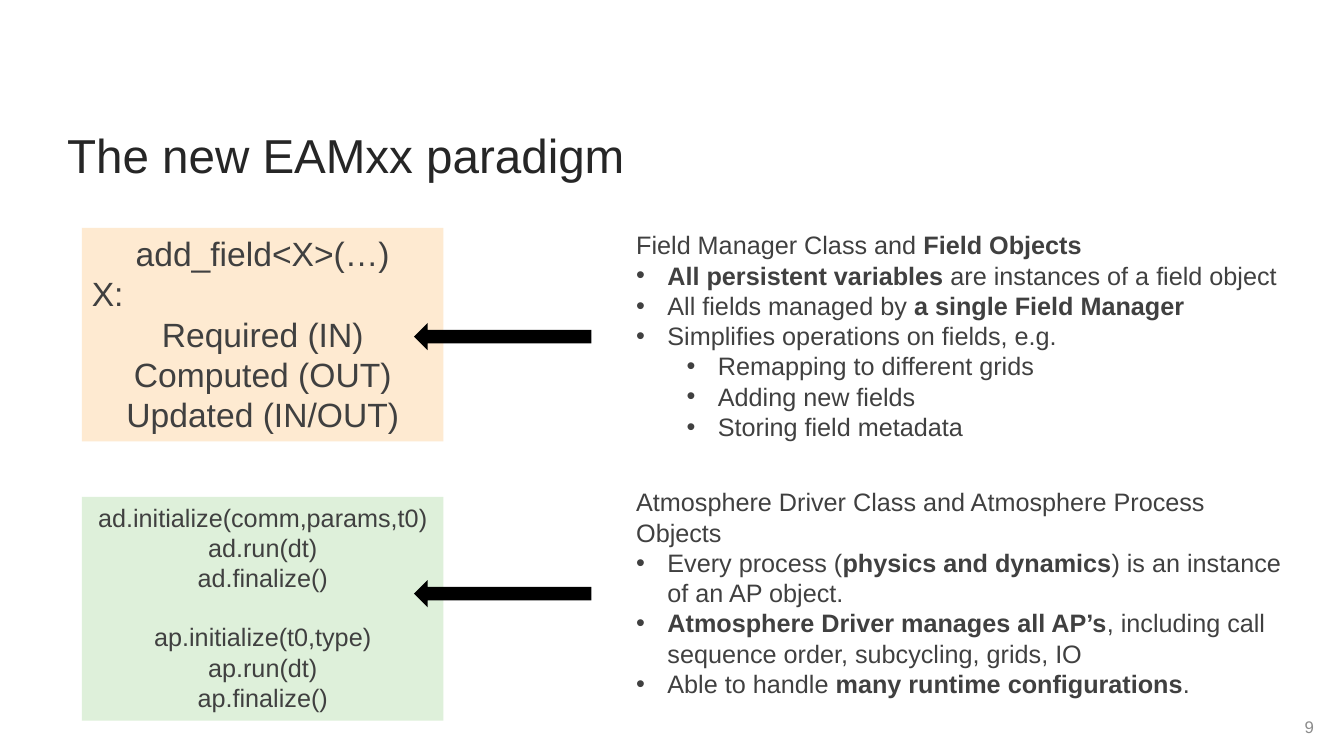
from pptx import Presentation
from pptx.dml.color import RGBColor
from pptx.enum.shapes import MSO_SHAPE as SHAPE
from pptx.enum.text import MSO_ANCHOR as ANCHOR, PP_ALIGN as ALIGN
from pptx.oxml.ns import qn
from pptx.util import Inches, Pt
from lxml.etree import SubElement

FONT = "Arial"
BLACK = RGBColor(0x00, 0x00, 0x00)
TITLE_INK = RGBColor(0x26, 0x26, 0x26)
INK = RGBColor(0x40, 0x40, 0x40)
GREY = RGBColor(0x8C, 0x8C, 0x8C)
ORANGE = RGBColor(0xFE, 0xEA, 0xD1)
GREEN = RGBColor(0xDE, 0xF0, 0xDA)

WIDTH, HEIGHT = Inches(13.33), Inches(7.5)

# Columns as (left, width) and rows as (top, height), in percent of the slide
CODE_COL, ARROW_COL, NOTES_COL = (6.1, 26.9), (30.8, 13.2), (46.6, 49.5)
NOTES_HEIGHT, ARROW_HEIGHT = 29.6, 3.6
BULLET_INDENT, LEVEL_STEP = Inches(0.31), Inches(0.5)
BLANK_LINE = Pt(20.7)

FIELD_CODE = [
    ("add_field<X>(…)", {"alignment": ALIGN.CENTER}),
    ("X:", {"alignment": ALIGN.LEFT}),
    ("Required (IN)", {"alignment": ALIGN.CENTER}),
    ("Computed (OUT)", {"alignment": ALIGN.CENTER}),
    ("Updated (IN/OUT)", {"alignment": ALIGN.CENTER}),
]
DRIVER_CODE = [
    ("ad.initialize(comm,params,t0)", {"alignment": ALIGN.CENTER}),
    ("ad.run(dt)", {"alignment": ALIGN.CENTER}),
    ("ad.finalize()", {"alignment": ALIGN.CENTER}),
    ("ap.initialize(t0,type)", {"alignment": ALIGN.CENTER, "space_before": BLANK_LINE}),
    ("ap.run(dt)", {"alignment": ALIGN.CENTER}),
    ("ap.finalize()", {"alignment": ALIGN.CENTER}),
]

# Notes as (bullet level or None, text); ** switches bold on and off
FIELD_NOTES = [
    (None, "Field Manager Class and **Field Objects**"),
    (0, "**All persistent variables** are instances of a field object"),
    (0, "All fields managed by **a single Field Manager**"),
    (0, "Simplifies operations on fields, e.g."),
    (1, "Remapping to different grids"),
    (1, "Adding new fields"),
    (1, "Storing field metadata"),
]
DRIVER_NOTES = [
    (None, "Atmosphere Driver Class and Atmosphere Process Objects"),
    (0, "Every process (**physics and dynamics**) is an instance of an AP object."),
    (0, "**Atmosphere Driver manages all AP’s**, including call sequence order, "
        "subcycling, grids, IO"),
    (0, "Able to handle **many runtime configurations**."),
]


def place(col, row):
    """Turn a percent column and row into left, top, width, height."""
    (left, width), (top, height) = col, row
    return [int(size * share / 100) for size, share in
            ((WIDTH, left), (HEIGHT, top), (WIDTH, width), (HEIGHT, height))]


def set_format(target, values):
    for name, value in values.items():
        setattr(target, name, value)


def style_font(font, size, color):
    set_format(font, {"name": FONT, "size": Pt(size)})
    font.color.rgb = color


def add_paragraph(tf, index):
    return tf.add_paragraph() if index else tf.paragraphs[0]


def add_text_box(slide, col, row, **frame):
    tf = slide.shapes.add_textbox(*place(col, row)).text_frame
    set_format(tf, {"word_wrap": True, **frame})
    return tf


def add_label(slide, col, row, text, size, color, frame, paragraph):
    p = add_text_box(slide, col, row, **frame).paragraphs[0]
    set_format(p, paragraph)
    r = p.add_run()
    r.text = text
    style_font(r.font, size, color)


def add_filled_shape(slide, kind, col, row, color):
    sp = slide.shapes.add_shape(kind, *place(col, row))
    sp.shadow.inherit = False
    sp.fill.solid()
    sp.fill.fore_color.rgb = color
    sp.line.fill.background()
    return sp


def add_code_box(slide, row, color, size, lines):
    sp = add_filled_shape(slide, SHAPE.RECTANGLE, CODE_COL, row, color)
    tf = sp.text_frame
    set_format(tf, {"word_wrap": True, "vertical_anchor": ANCHOR.TOP})
    for i, (text, values) in enumerate(lines):
        p = add_paragraph(tf, i)
        set_format(p, values)
        r = p.add_run()
        r.text = text
        style_font(r.font, size, INK)


def add_bullet(p, level):
    p.level = level
    pPr = p._p.get_or_add_pPr()
    pPr.set("marL", str(BULLET_INDENT + level * LEVEL_STEP))
    pPr.set("indent", str(-BULLET_INDENT))
    SubElement(pPr, qn("a:buFont"), typeface=FONT)
    SubElement(pPr, qn("a:buChar"), char="•")


def add_notes(slide, top, notes):
    """Add a bulleted explanation and the arrow from its middle to the code."""
    tf = add_text_box(slide, NOTES_COL, (top, NOTES_HEIGHT))
    for i, (level, text) in enumerate(notes):
        p = add_paragraph(tf, i)
        if level is not None:
            add_bullet(p, level)
        for j, part in enumerate(text.split("**")):
            if part:
                r = p.add_run()
                r.text = part
                style_font(r.font, 18, INK)
                r.font.bold = j % 2 == 1
    arrow_top = top + (NOTES_HEIGHT - ARROW_HEIGHT) / 2
    add_filled_shape(slide, SHAPE.LEFT_ARROW, ARROW_COL, (arrow_top, ARROW_HEIGHT), BLACK)


def main():
    prs = Presentation()
    prs.slide_width, prs.slide_height = WIDTH, HEIGHT
    slide = prs.slides.add_slide(prs.slide_layouts[6])

    add_label(slide, (5, 90), (16.8, 13.33), "The new EAMxx paradigm", 34, TITLE_INK,
              {"margin_left": 0, "margin_right": 0}, {"line_spacing": 0.9})
    add_label(slide, (76, 22.5), (93.47, 5.33), "9", 12, GREY,
              {"vertical_anchor": ANCHOR.MIDDLE}, {"alignment": ALIGN.RIGHT})

    add_code_box(slide, (30.13, 28.27), ORANGE, 24, FIELD_CODE)
    add_code_box(slide, (65.73, 29.6), GREEN, 18, DRIVER_CODE)
    add_notes(slide, 29.73, FIELD_NOTES)
    add_notes(slide, 63.73, DRIVER_NOTES)

    prs.save("out.pptx")


if __name__ == "__main__":
    main()
